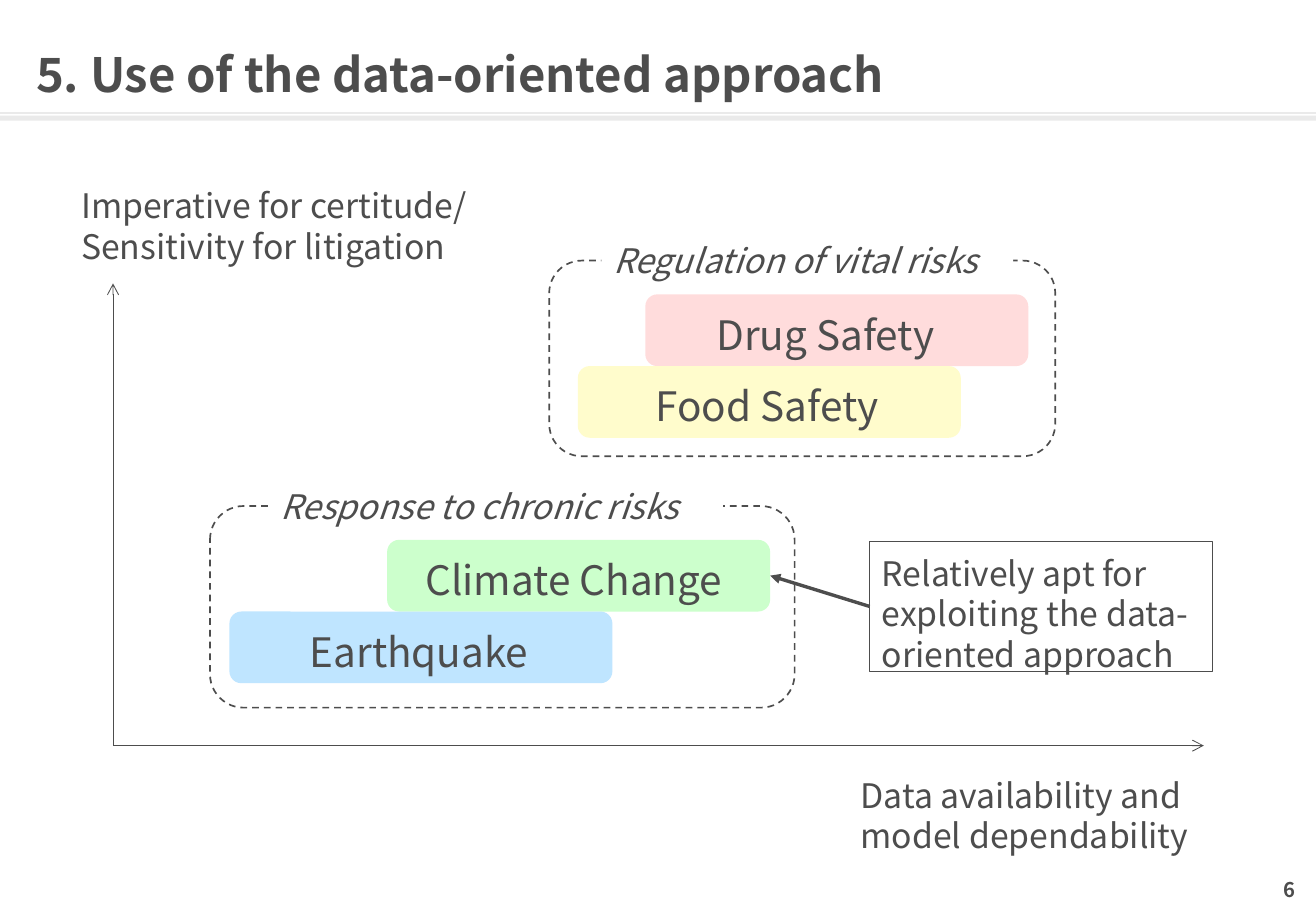
from lxml import etree
from pptx import Presentation
from pptx.dml.color import RGBColor
from pptx.enum.dml import MSO_LINE
from pptx.enum.shapes import MSO_CONNECTOR, MSO_SHAPE
from pptx.enum.text import MSO_ANCHOR, PP_ALIGN
from pptx.oxml.ns import qn
from pptx.util import Pt

FONT = "Noto Sans CJK JP"
COLORS = {
    "ink": "4D4D4D",
    "rule": "EAEAEA",
    "white": "FFFFFF",
    "yellow": "FFFCCC",
    "green": "CCFFCC",
    "blue": "BFE5FF",
    "pink": "FFDCDC",
}
BAR_WIDTH, BAR_HEIGHT = 227, 42.5
CAPTION_HEIGHT = 31.5


def color(name):
    """Return the named colour."""
    return RGBColor.from_string(COLORS[name])


def add_box(page, box, kind=MSO_SHAPE.RECTANGLE, fill=None, line=None, dash=None):
    """Add a shape at (left, top, width, height) with the given fill and outline."""
    shape = page.shapes.add_shape(kind, *map(Pt, box))
    shape.shadow.inherit = False
    if fill:
        shape.fill.solid()
        shape.fill.fore_color.rgb = color(fill)
    else:
        shape.fill.background()
    if line:
        shape.line.color.rgb = color("ink")
        shape.line.width = Pt(line)
        if dash:
            shape.line.dash_style = dash
    else:
        shape.line.fill.background()
    return shape


def write(shape, text, size=20, bold=False, italic=False, align=PP_ALIGN.LEFT,
          anchor=MSO_ANCHOR.TOP, insets=(7.2, 3.6, 7.2, 3.6)):
    """Put formatted text into a shape."""
    frame = shape.text_frame
    frame.word_wrap = True
    frame.vertical_anchor = anchor
    (frame.margin_left, frame.margin_top,
     frame.margin_right, frame.margin_bottom) = map(Pt, insets)
    para = frame.paragraphs[0]
    para.alignment = align
    para.line_spacing = Pt(size * 1.2)
    span = para.add_run()
    span.text = text
    span.font.name = FONT
    span.font.size = Pt(size)
    span.font.bold = bold
    span.font.italic = italic
    span.font.color.rgb = color("ink")


def add_text(page, box, text, **style):
    """Add a text box."""
    write(page.shapes.add_textbox(*map(Pt, box)), text, **style)


def add_line(page, start, end, width, ink="ink", head=None):
    """Add a straight line, with an arrowhead at its end if one is named."""
    line = page.shapes.add_connector(MSO_CONNECTOR.STRAIGHT, *map(Pt, start + end))
    line.line.color.rgb = color(ink)
    line.line.width = Pt(width)
    if head:
        outline = line.line._get_or_add_ln()
        etree.SubElement(outline, qn("a:tailEnd"), type=head)
    etree.SubElement(line._element.spPr, qn("a:effectLst"))
    return line


def add_header(page, box, title):
    """Add the title and the double rule below it."""
    left, top, width, height = box
    bottom = top + height
    add_line(page, (left, bottom - 4.5), (left + width, bottom - 4.5), 0.75, "rule")
    add_box(page, (left, bottom - 3, width, 3), fill="rule")
    add_text(page, (left + 21.5, top + 18, width - 43, 51), title, size=28,
             bold=True, anchor=MSO_ANCHOR.MIDDLE, insets=(0, 0, 0, 0))


def add_axes(page, box, vertical, horizontal):
    """Add both axes along the left and bottom of the box, with their names."""
    left, top, width, height = box
    origin = (left, top + height)
    add_line(page, origin, (left + width, top + height), 0.5, head="arrow")
    add_line(page, origin, (left, top), 0.5, head="arrow")
    add_text(page, (left - 26, top - 62, 275, 55.5), vertical)
    add_text(page, (left + width - 210.5, top + height + 13.5, 215.5, 55.5), horizontal)


def add_risk_group(page, box, caption, caption_left, caption_width, bars):
    """Add a dashed frame with its caption and stacked bars; return the bars."""
    left, top, width, height = box
    add_box(page, box, MSO_SHAPE.ROUNDED_RECTANGLE, line=1, dash=MSO_LINE.DASH)
    label = add_box(page, (left + caption_left, top - CAPTION_HEIGHT / 2,
                           caption_width, CAPTION_HEIGHT), fill="white")
    write(label, caption, italic=True)
    shapes = []
    for row, (name, fill, bar_left, text_left) in enumerate(bars):
        x, y = left + bar_left, top + 20 + row * BAR_HEIGHT
        shapes.append(add_box(page, (x, y, BAR_WIDTH, BAR_HEIGHT),
                              MSO_SHAPE.ROUNDED_RECTANGLE, fill=fill))
        add_text(page, (x + text_left, y + 5.5, BAR_WIDTH - text_left, 36),
                 name, size=24)
    return shapes


def add_callout(page, box, text, target):
    """Add a framed note with an arrow to the right side of the target."""
    note = add_box(page, box, line=0.5)
    write(note, text, insets=(7.2, 6.5, 7.2, 0))
    arrow = add_line(page, (0, 0), (0, 0), 2, head="triangle")
    arrow.begin_connect(note, 1)
    arrow.end_connect(target, 3)


def main():
    """Build the slide and save it."""
    deck = Presentation()
    deck.slide_width, deck.slide_height = Pt(780), Pt(540)
    page = deck.slides.add_slide(deck.slide_layouts[6])
    add_header(page, (0, 0, 780, 71.5), "5. Use of the data-oriented approach")
    add_axes(page, (67, 168, 646.5, 274),
             "Imperative for certitude/ Sensitivity for litigation",
             "Data availability and model dependability")
    add_risk_group(page, (325.5, 154.5, 300, 116), "Regulation of vital risks", 31, 244,
                   [("Drug Safety", "pink", 57, 35), ("Food Safety", "yellow", 17, 39)])
    climate, _ = add_risk_group(
        page, (124.5, 300, 346.5, 119.5), "Response to chronic risks", 34.5, 269.5,
        [("Climate Change", "green", 105, 15.5), ("Earthquake", "blue", 11.5, 40.5)])
    add_callout(page, (515.5, 321, 203, 77),
                "Relatively apt for exploiting the data-oriented approach", climate)
    add_text(page, (585.5, 517, 182, 20), "6", size=12, bold=True,
             align=PP_ALIGN.RIGHT, anchor=MSO_ANCHOR.MIDDLE, insets=(0, 0, 0, 0))
    deck.save("out.pptx")


if __name__ == "__main__":
    main()
